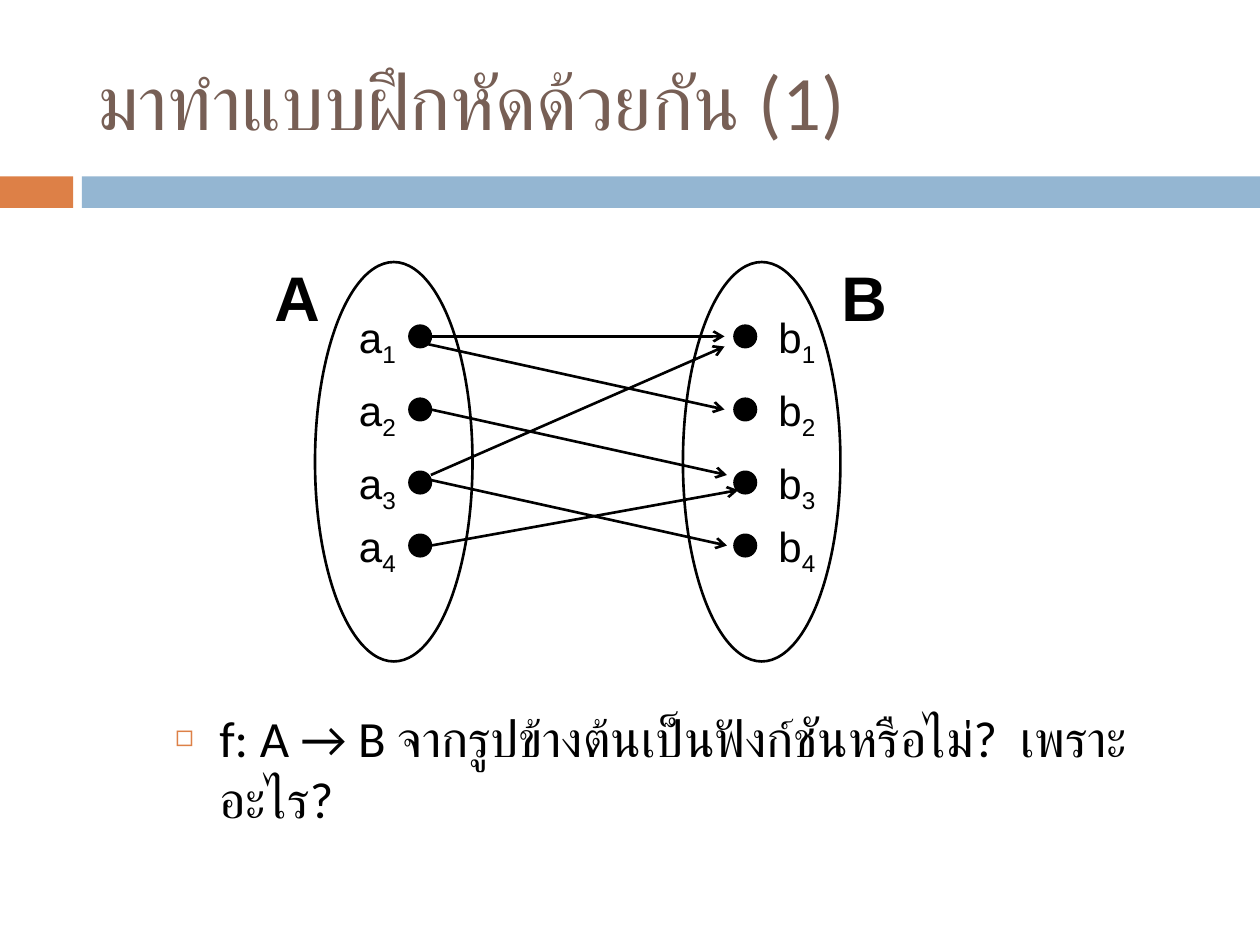
import pptx
import pptx.dml.color
import pptx.enum.shapes
import pptx.enum.text
import pptx.oxml.ns
import pptx.util
from lxml import etree

Inches = pptx.util.Inches
Pt = pptx.util.Pt
RGBColor = pptx.dml.color.RGBColor
Shapes = pptx.enum.shapes.MSO_SHAPE
Text = pptx.enum.text
qn = pptx.oxml.ns.qn

BLACK = RGBColor(0x00, 0x00, 0x00)
BROWN = RGBColor(0x77, 0x5F, 0x55)
ORANGE = RGBColor(0xDD, 0x80, 0x47)
BLUE = RGBColor(0x94, 0xB6, 0xD2)

ROWS = [2.67, 3.25, 3.83, 4.33]
DOT_SIZE = 0.17
SETS = [
    ("A", 2.5, 2.08, "a", 2.75, 3.25),
    ("B", 5.42, 6.58, "b", 6.08, 5.83),
]
MAPPINGS = [
    ((3.42, 2.67), (5.75, 2.67)),
    ((3.39, 2.73), (5.75, 3.25)),
    ((3.42, 3.25), (5.77, 3.77)),
    ((3.42, 3.81), (5.77, 4.33)),
    ((3.42, 4.33), (5.86, 3.89)),
    ((3.42, 3.77), (5.75, 2.75)),
]


class SlideBuilder:
    """Draws styled elements on the current slide."""

    def __init__(self, slide):
        self.slide = slide
        self.line_width = Pt(1.5)

    def style_runs(self, paragraph, font_name, size, color, bold=False):
        for run in paragraph.runs:
            run.font.name = font_name
            run.font.size = Pt(size)
            run.font.color.rgb = color
            run.font.bold = bold

    def placeholder(self, index, box, text, size, color, anchor):
        shape = self.slide.placeholders[index]
        shape.left, shape.top, shape.width, shape.height = map(Inches, box)
        frame = shape.text_frame
        frame.text = text
        frame.word_wrap = True
        frame.auto_size = Text.MSO_AUTO_SIZE.NONE
        frame.vertical_anchor = anchor
        paragraph = frame.paragraphs[0]
        paragraph.alignment = Text.PP_ALIGN.LEFT
        self.style_runs(paragraph, "Calibri", size, color)
        return paragraph

    def bullet(self, paragraph, character, color, percent, indent):
        paragraph.space_before = Pt(7)
        properties = paragraph._p.get_or_add_pPr()
        properties.set("marL", str(Inches(indent)))
        properties.set("indent", str(-Inches(indent)))
        bullet_color = etree.SubElement(properties, qn("a:buClr"))
        etree.SubElement(bullet_color, qn("a:srgbClr"), val=str(color))
        etree.SubElement(properties, qn("a:buSzPct"), val=str(percent * 1000))
        etree.SubElement(properties, qn("a:buChar"), char=character)

    def shape(self, kind, box, fill=None, line=None):
        shape = self.slide.shapes.add_shape(kind, *map(Inches, box))
        shape.shadow.inherit = False
        if fill is None:
            shape.fill.background()
        else:
            shape.fill.solid()
            shape.fill.fore_color.rgb = fill
        if line is None:
            shape.line.fill.background()
        else:
            shape.line.color.rgb = line
            shape.line.width = self.line_width

    def label(self, box, text, size, subscript=None, bold=False):
        shape = self.slide.shapes.add_textbox(*map(Inches, box))
        frame = shape.text_frame
        frame.word_wrap = True
        frame.auto_size = Text.MSO_AUTO_SIZE.SHAPE_TO_FIT_TEXT
        frame.text = text
        paragraph = frame.paragraphs[0]
        if subscript is not None:
            run = paragraph.add_run()
            run.text = str(subscript)
            run.font._element.set("baseline", "-25000")
        self.style_runs(paragraph, "Arial", size, BLACK, bold)

    def arrow(self, start, end):
        connector = self.slide.shapes.add_connector(
            pptx.enum.shapes.MSO_CONNECTOR.STRAIGHT, *map(Inches, start + end)
        )
        connector.line.color.rgb = BLACK
        connector.line.width = self.line_width
        etree.SubElement(connector.line._get_or_add_ln(), qn("a:tailEnd"), type="arrow")
        etree.SubElement(connector._element.spPr, qn("a:effectLst"))


def main():
    presentation = pptx.Presentation()
    presentation.slide_width = Inches(10)
    presentation.slide_height = Inches(7.5)
    builder = SlideBuilder(presentation.slides.add_slide(presentation.slide_layouts[1]))

    builder.shape(Shapes.RECTANGLE, (0, 1.4, 0.58, 0.25), fill=ORANGE)
    builder.shape(Shapes.RECTANGLE, (0.65, 1.4, 9.35, 0.25), fill=BLUE)
    builder.placeholder(
        0, (0.67, 0.25, 8.92, 1.08), "มาทำแบบฝึกหัดด้วยกัน (1)",
        44, BROWN, Text.MSO_ANCHOR.MIDDLE,
    )
    question = builder.placeholder(
        1, (1.29, 5.56, 7.81, 0.95),
        "f: A → B จากรูปข้างต้นเป็นฟังก์ชันหรือไม่?  เพราะอะไร?",
        29, BLACK, Text.MSO_ANCHOR.TOP,
    )
    builder.bullet(question, "◻", ORANGE, 60, 0.35)

    for name, oval_left, name_left, letter, letter_left, dot_left in SETS:
        for number, center in enumerate(ROWS, start=1):
            dot = (dot_left, center - DOT_SIZE / 2, DOT_SIZE, DOT_SIZE)
            builder.shape(Shapes.OVAL, dot, fill=BLACK, line=BLACK)
            builder.label((letter_left, center - 0.25, 0.58, 0.51), letter, 24, number)
        builder.shape(Shapes.OVAL, (oval_left, 2.08, 1.25, 3.17), line=BLACK)
        builder.label((name_left, 2, 0.67, 0.71), name, 36, bold=True)

    for start, end in MAPPINGS:
        builder.arrow(start, end)

    presentation.save("out.pptx")


if __name__ == "__main__":
    main()
